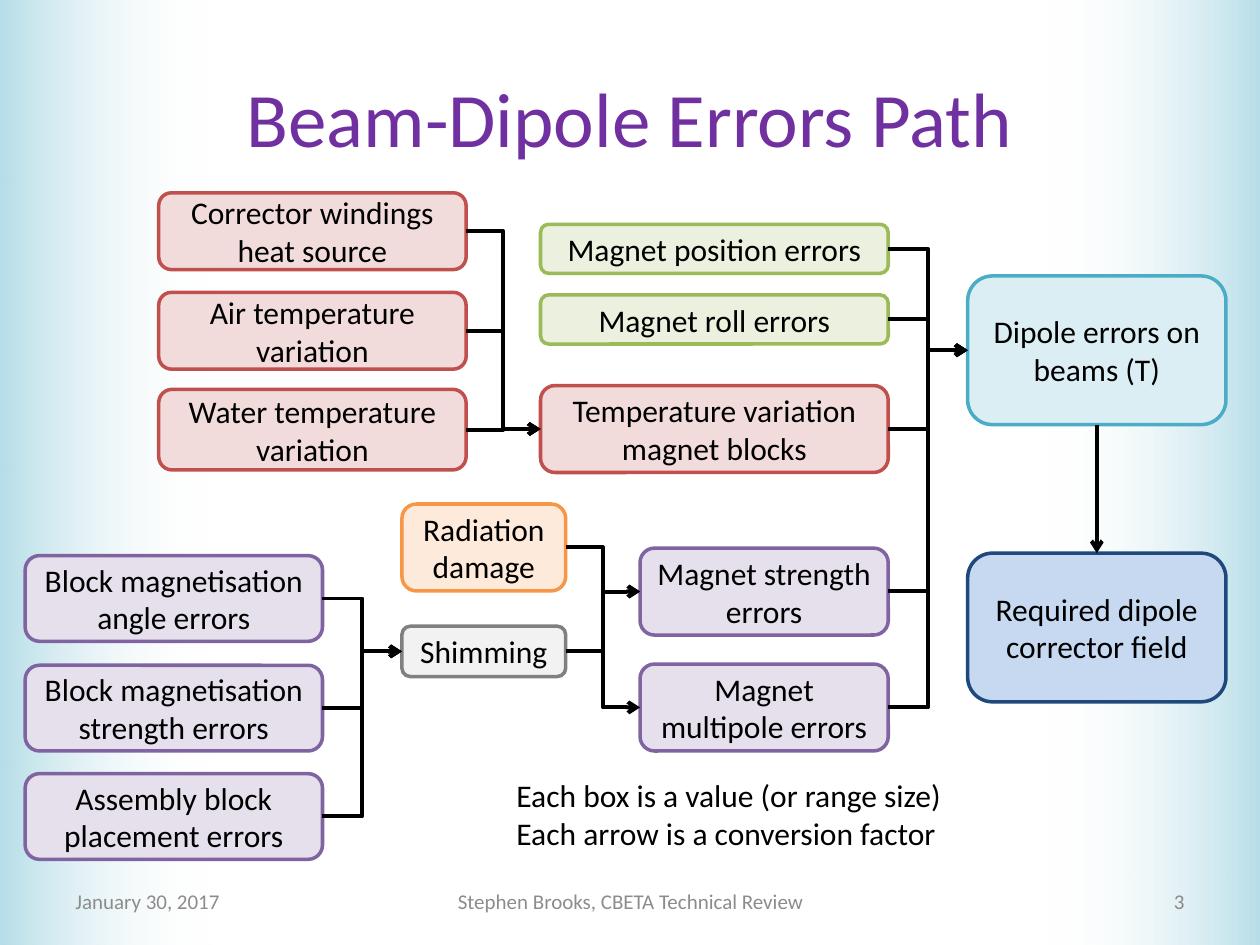
import lxml.etree
import pptx
import pptx.dml.color
import pptx.enum.shapes
import pptx.enum.text
import pptx.oxml.ns
import pptx.util
from pptx.util import Inches

RGB = pptx.dml.color.RGBColor.from_string
qn = pptx.oxml.ns.qn
SHAPE = pptx.enum.shapes.MSO_SHAPE
LINK = pptx.enum.shapes.MSO_CONNECTOR
ALIGN = pptx.enum.text.PP_ALIGN
ANCHOR = pptx.enum.text.MSO_ANCHOR

THEME = {
    "font": "Calibri",
    "title_size": 44, "body_size": 18, "footer_size": 12,
    "title": "7030A0", "text": "000000", "footer": "8C8C8C", "number": "898989",
    "edge": "B7DEE8", "white": "FFFFFF", "arrow": "000000",
    # fill and outline of each kind of box
    "beam": ("DBEEF4", "4BACC6"),
    "placement": ("EBF1DE", "9BBB59"),
    "heat": ("F2DCDB", "C0504D"),
    "magnet": ("E6E0EC", "8064A2"),
    "corrector": ("C6D9F1", "1F497D"),
    "shim": ("F2F2F2", "808080"),
    "radiation": ("FDEADA", "F79646"),
}


def write(sp, text, size=THEME["body_size"], color=THEME["text"],
          align=ALIGN.CENTER, anchor=ANCHOR.MIDDLE, wrap=True):
    tf = sp.text_frame
    tf.word_wrap = wrap
    tf.vertical_anchor = anchor
    for i, line in enumerate(text.split("\n")):
        p = tf.paragraphs[0] if i == 0 else tf.add_paragraph()
        p.alignment = align
        r = p.add_run()
        r.text = line
        r.font.name = THEME["font"]
        r.font.size = pptx.util.Pt(size)
        r.font.color.rgb = RGB(color)


def connect(start, end, kind=LINK.ELBOW, start_site=3, end_site=1):
    c = s.shapes.add_connector(kind, 0, 0, 0, 0)
    c.begin_connect(start, start_site)
    c.end_connect(end, end_site)
    c.line.color.rgb = RGB(THEME["arrow"])
    c.line.width = pptx.util.Pt(2.25)
    lxml.etree.SubElement(c.line._get_or_add_ln(), qn("a:tailEnd"), type="arrow")
    lxml.etree.SubElement(c._element.spPr, qn("a:effectLst"))


prs = pptx.Presentation()
prs.slide_width = Inches(10)
prs.slide_height = Inches(7.5)
s = prs.slides.add_slide(prs.slide_layouts[6])

# Side bands fading towards the middle
for left, rotation in ((8.31, 180), (0, 0)):
    sp = s.shapes.add_shape(SHAPE.RECTANGLE, Inches(left), 0, Inches(1.69), Inches(7.5))
    sp.rotation = rotation
    sp.shadow.inherit = False
    sp.line.fill.background()
    sp.fill.gradient()
    sp.fill.gradient_angle = 0
    for stop, position, color in zip(sp.fill.gradient_stops, (0, 1),
                                     (THEME["edge"], THEME["white"])):
        stop.position = position
        stop.color.rgb = RGB(color)
    clear = sp._element.spPr.findall(".//" + qn("a:srgbClr"))[-1]
    lxml.etree.SubElement(clear, qn("a:alpha"), val="0")

# Title
sp = s.shapes.add_textbox(Inches(0.5), Inches(0.3), Inches(9), Inches(1.25))
write(sp, "Beam-Dipole Errors Path", size=THEME["title_size"], color=THEME["title"])

# Footer
for text, left, width, align, color in (
    ("January 30, 2017", 0.5, 2.33, ALIGN.LEFT, THEME["footer"]),
    ("Stephen Brooks, CBETA Technical Review", 3.42, 3.17, ALIGN.CENTER, THEME["footer"]),
    ("3", 7.17, 2.33, ALIGN.RIGHT, THEME["number"]),
):
    sp = s.shapes.add_textbox(Inches(left), Inches(6.95), Inches(width), Inches(0.4))
    write(sp, text, size=THEME["footer_size"], color=color, align=align)

# Boxes: key, text, kind, left, top, width, height
boxes = {}
for key, text, kind, left, top, width, height in (
    ("dipole", "Dipole errors on beams (T)", "beam", 7.68, 2.19, 2.05, 1.18),
    ("required", "Required dipole corrector field", "corrector", 7.68, 4.39, 2.05, 1.18),
    ("position", "Magnet position errors", "placement", 4.29, 1.78, 2.76, 0.39),
    ("roll", "Magnet roll errors", "placement", 4.29, 2.34, 2.76, 0.39),
    ("temperature", "Temperature variation magnet blocks", "heat", 4.29, 3.06, 2.76, 0.69),
    ("windings", "Corrector windings heat source", "heat", 1.26, 1.53, 2.44, 0.61),
    ("air", "Air temperature variation", "heat", 1.26, 2.32, 2.44, 0.61),
    ("water", "Water temperature variation", "heat", 1.26, 3.09, 2.44, 0.64),
    ("strength", "Magnet strength errors", "magnet", 5.08, 4.35, 1.97, 0.69),
    ("multipole", "Magnet multipole errors", "magnet", 5.08, 5.27, 1.97, 0.69),
    ("radiation", "Radiation damage", "radiation", 3.19, 4, 1.3, 0.69),
    ("shimming", "Shimming", "shim", 3.19, 4.97, 1.3, 0.4),
    ("block angle", "Block magnetisation angle errors", "magnet", 0.2, 4.41, 2.36, 0.68),
    ("block strength", "Block magnetisation strength errors", "magnet", 0.2, 5.28, 2.36, 0.68),
    ("assembly", "Assembly block placement errors", "magnet", 0.2, 6.14, 2.36, 0.68),
):
    sp = s.shapes.add_shape(SHAPE.ROUNDED_RECTANGLE, Inches(left), Inches(top),
                            Inches(width), Inches(height))
    fill, outline = THEME[kind]
    sp.shadow.inherit = False
    sp.fill.solid()
    sp.fill.fore_color.rgb = RGB(fill)
    sp.line.color.rgb = RGB(outline)
    sp.line.width = pptx.util.Pt(2)
    write(sp, text)
    boxes[key] = sp

# Arrows from each cause to its effects
for target, sources in (
    ("temperature", ("windings", "air", "water")),
    ("dipole", ("position", "roll", "temperature", "strength", "multipole")),
    ("shimming", ("block angle", "block strength", "assembly")),
    ("strength", ("radiation", "shimming")),
    ("multipole", ("shimming",)),
):
    for source in sources:
        connect(boxes[source], boxes[target])
connect(boxes["dipole"], boxes["required"], LINK.STRAIGHT, start_site=2, end_site=0)

# Reading key
sp = s.shapes.add_textbox(Inches(4), Inches(6.11), Inches(3.61), Inches(0.71))
write(sp, "Each box is a value (or range size)\nEach arrow is a conversion factor",
      align=ALIGN.LEFT, anchor=ANCHOR.TOP, wrap=False)
sp.text_frame.auto_size = pptx.enum.text.MSO_AUTO_SIZE.SHAPE_TO_FIT_TEXT

prs.save("out.pptx")
